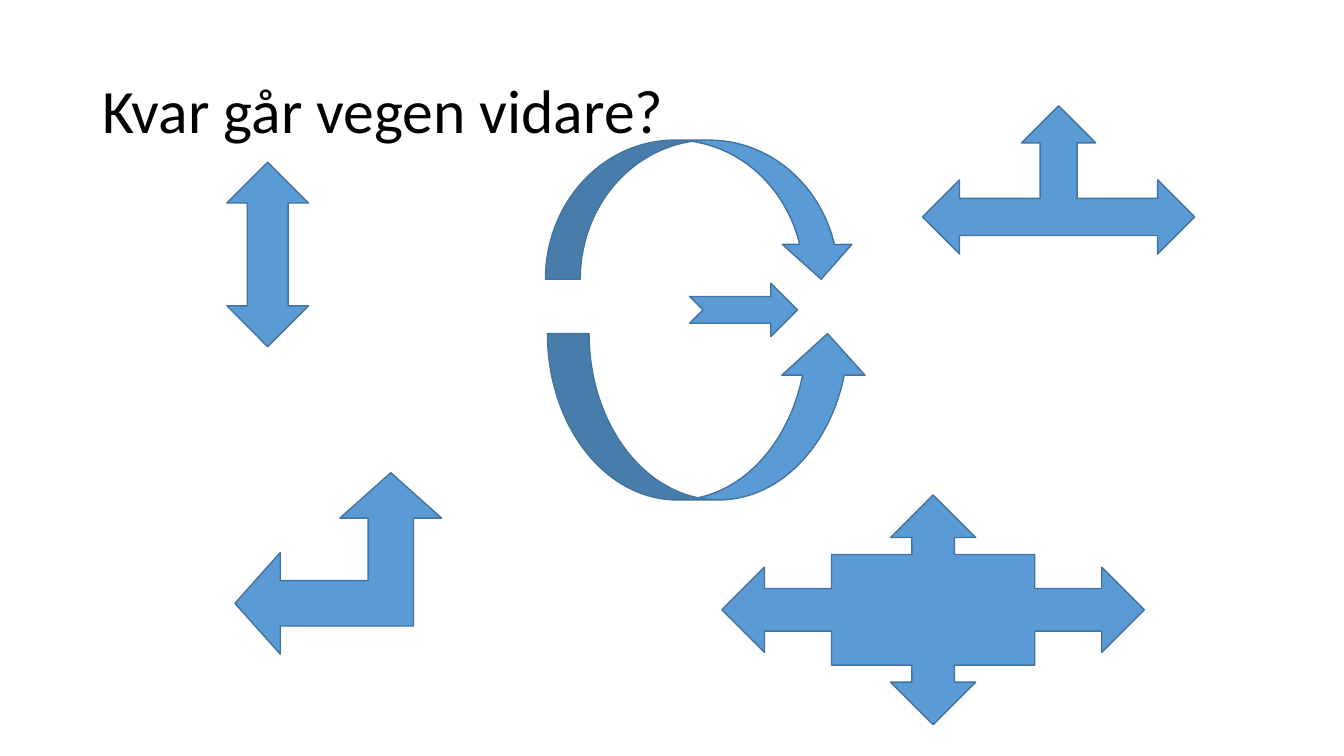
from dataclasses import dataclass

from pptx import Presentation
from pptx.dml.color import RGBColor
from pptx.enum.shapes import MSO_SHAPE as Preset
from pptx.enum.text import MSO_ANCHOR as Anchor, PP_ALIGN as Align
from pptx.util import Inches, Pt


@dataclass(frozen=True)
class Theme:
    font: str = "Calibri"
    title_size: int = 44
    text: RGBColor = RGBColor(0x00, 0x00, 0x00)
    arrow_fill: RGBColor = RGBColor(0x5B, 0x9B, 0xD5)
    arrow_line: RGBColor = RGBColor(0x43, 0x73, 0x9E)
    line_width: int = 1


THEME = Theme()


def write_text(shape, text, size, color, align=Align.LEFT, anchor=Anchor.MIDDLE, spacing=0.9):
    frame = shape.text_frame
    frame.word_wrap = True
    frame.vertical_anchor = anchor
    paragraph = frame.paragraphs[0]
    paragraph.alignment = align
    paragraph.line_spacing = spacing
    run = paragraph.add_run()
    run.text = text
    run.font.name = THEME.font
    run.font.size = Pt(size)
    run.font.color.rgb = color


presentation = Presentation()
presentation.slide_width = Inches(13.33)
presentation.slide_height = Inches(7.5)
slide = presentation.slides.add_slide(presentation.slide_layouts.get_by_name("Title Only"))

# Arrows, from back to front: preset, left, top, width, height, adjustments
arrows = [
    (Preset.UP_DOWN_ARROW, 2.25, 1.61, 0.81, 1.83, ()),
    (Preset.CURVED_DOWN_ARROW, 5.41, 1.39, 3.08, 1.38, ()),
    (Preset.LEFT_RIGHT_UP_ARROW, 9.15, 1.05, 2.7, 1.47, ()),
    (Preset.LEFT_UP_ARROW, 2.33, 4.69, 2.05, 1.8, (0.25, 0.28, 0.25)),
    (Preset.QUAD_ARROW_CALLOUT, 7.16, 4.91, 4.19, 2.28, ()),
    (Preset.CURVED_UP_ARROW, 5.43, 3.31, 3.19, 1.65, ()),
    (Preset.NOTCHED_RIGHT_ARROW, 6.84, 2.81, 1.07, 0.53, ()),
]
for preset, left, top, width, height, adjustments in arrows:
    arrow = slide.shapes.add_shape(
        preset, Inches(left), Inches(top), Inches(width), Inches(height)
    )
    for index, value in enumerate(adjustments):
        arrow.adjustments[index] = value
    arrow.shadow.inherit = False
    arrow.fill.solid()
    arrow.fill.fore_color.rgb = THEME.arrow_fill
    arrow.line.color.rgb = THEME.arrow_line
    arrow.line.width = Pt(THEME.line_width)

# Title
title = slide.shapes.title
title.left, title.top = Inches(0.92), Inches(0.4)
title.width, title.height = Inches(11.5), Inches(1.45)
write_text(title, "Kvar går vegen vidare?", size=THEME.title_size, color=THEME.text)

presentation.save("out.pptx")
